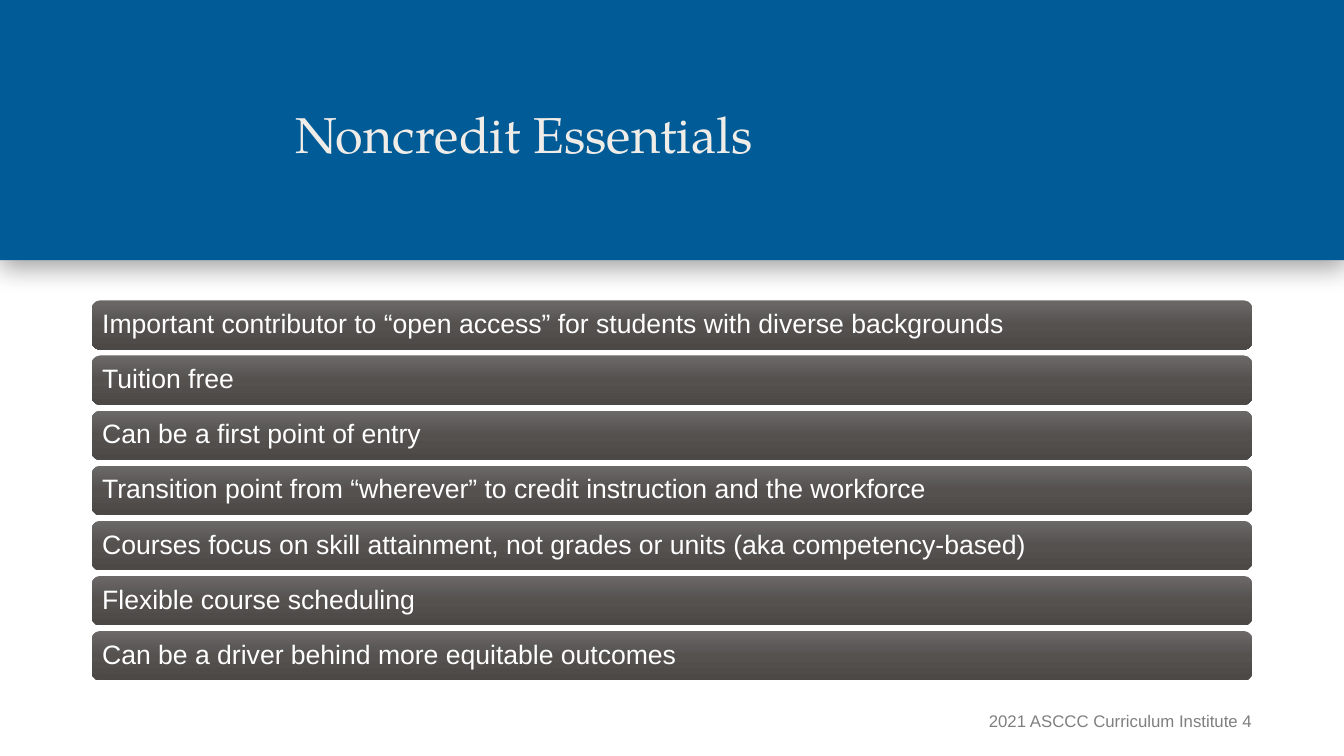
"""Builds the Noncredit Essentials slide."""
from copy import deepcopy
from dataclasses import dataclass

from lxml import etree
from pptx import Presentation
from pptx.dml.color import RGBColor
from pptx.enum.shapes import MSO_SHAPE
from pptx.enum.text import MSO_ANCHOR, MSO_AUTO_SIZE, PP_ALIGN
from pptx.oxml.ns import qn
from pptx.util import Inches, Pt

RECTANGLE, ROUNDED = MSO_SHAPE.RECTANGLE, MSO_SHAPE.ROUNDED_RECTANGLE
MIDDLE, NO_FIT = MSO_ANCHOR.MIDDLE, MSO_AUTO_SIZE.NONE
LEFT, RIGHT = PP_ALIGN.LEFT, PP_ALIGN.RIGHT
TITLE_ONLY = 5

ESSENTIALS = [
    "Important contributor to “open access” for students with diverse backgrounds",
    "Tuition free",
    "Can be a first point of entry",
    "Transition point from “wherever” to credit instruction and the workforce",
    "Courses focus on skill attainment, not grades or units (aka competency-based)",
    "Flexible course scheduling",
    "Can be a driver behind more equitable outcomes",
]


@dataclass(frozen=True)
class Theme:
    band: str = "005B96"
    title: str = "F0ECE8"
    bar_text: str = "FFFFFF"
    footer: str = "7F7F7F"
    shadow: str = "000000"
    bar_stops: tuple = ((0, "6B6968"), (0.5, "54514F"), (1, "4B4846"))
    heading_font: str = "TeX Gyre Pagella"
    body_font: str = "Arial"
    title_size: int = 36
    bar_size: int = 19
    footer_size: int = 12


class SlideBuilder:
    def __init__(self, slide, theme):
        self.slide = slide
        self.theme = theme

    def set_text(self, shape, text, font, size, color, insets, align=LEFT, spacing=0.9):
        frame = shape.text_frame
        frame.text = text
        frame.word_wrap = True
        frame.auto_size = NO_FIT
        frame.vertical_anchor = MIDDLE
        (frame.margin_left, frame.margin_top,
         frame.margin_right, frame.margin_bottom) = map(Inches, insets)
        paragraph = frame.paragraphs[0]
        paragraph.alignment = align
        paragraph.line_spacing = spacing
        run_font = paragraph.runs[0].font
        run_font.name = font
        run_font.size = Pt(size)
        run_font.color.rgb = RGBColor.from_string(color)

    def shape(self, kind, box):
        shape = self.slide.shapes.add_shape(kind, *map(Inches, box))
        shape.shadow.inherit = False
        shape.line.fill.background()
        return shape

    def title(self, text, box):
        title = self.slide.shapes.title
        title.left, title.top, title.width, title.height = map(Inches, box)
        self.set_text(title, text, self.theme.heading_font, self.theme.title_size,
                      self.theme.title, [0.13] * 4)

    def band(self, box):
        band = self.shape(RECTANGLE, box)
        band.fill.solid()
        band.fill.fore_color.rgb = RGBColor.from_string(self.theme.band)
        effects = band.element.spPr.find(qn("a:effectLst"))
        shadow = etree.SubElement(effects, qn("a:outerShdw"), blurRad=str(Pt(18)),
                                  dist=str(Pt(5)), dir="5400000", rotWithShape="0")
        color = etree.SubElement(shadow, qn("a:srgbClr"), val=self.theme.shadow)
        etree.SubElement(color, qn("a:alpha"), val="35000")
        self.slide.shapes.title.element.addprevious(band.element)

    def bar(self, text, box):
        bar = self.shape(ROUNDED, box)
        bar.fill.gradient()
        bar.fill.gradient_angle = 270
        first_stop = bar.element.spPr.find(".//" + qn("a:gs"))
        first_stop.addnext(deepcopy(first_stop))
        for stop, (position, color) in zip(bar.fill.gradient_stops, self.theme.bar_stops):
            stop.position = position
            stop.color.rgb = RGBColor.from_string(color)
        self.set_text(bar, text, self.theme.body_font, self.theme.bar_size,
                      self.theme.bar_text, [0.08] * 4)

    def footer(self, text, box):
        footer = self.slide.shapes.add_textbox(*map(Inches, box))
        self.set_text(footer, text, self.theme.body_font, self.theme.footer_size,
                      self.theme.footer, (0.1, 0.05, 0, 0.05), RIGHT, 1.0)


def main():
    deck = Presentation()
    deck.slide_width, deck.slide_height = Inches(13.33), Inches(7.5)
    builder = SlideBuilder(deck.slides.add_slide(deck.slide_layouts[TITLE_ONLY]), Theme())

    builder.band((0, 0, 13.33, 2.58))
    builder.title("Noncredit Essentials", (2.8, 0.44, 9.62, 1.84))
    first_top, last_top = 2.98, 6.26
    pitch = (last_top - first_top) / (len(ESSENTIALS) - 1)
    for index, essential in enumerate(ESSENTIALS):
        builder.bar(essential, (0.91, first_top + index * pitch, 11.51, 0.49))
    builder.footer("2021 ASCCC Curriculum Institute 4", (9.55, 6.95, 2.87, 0.4))

    deck.save("out.pptx")


if __name__ == "__main__":
    main()
